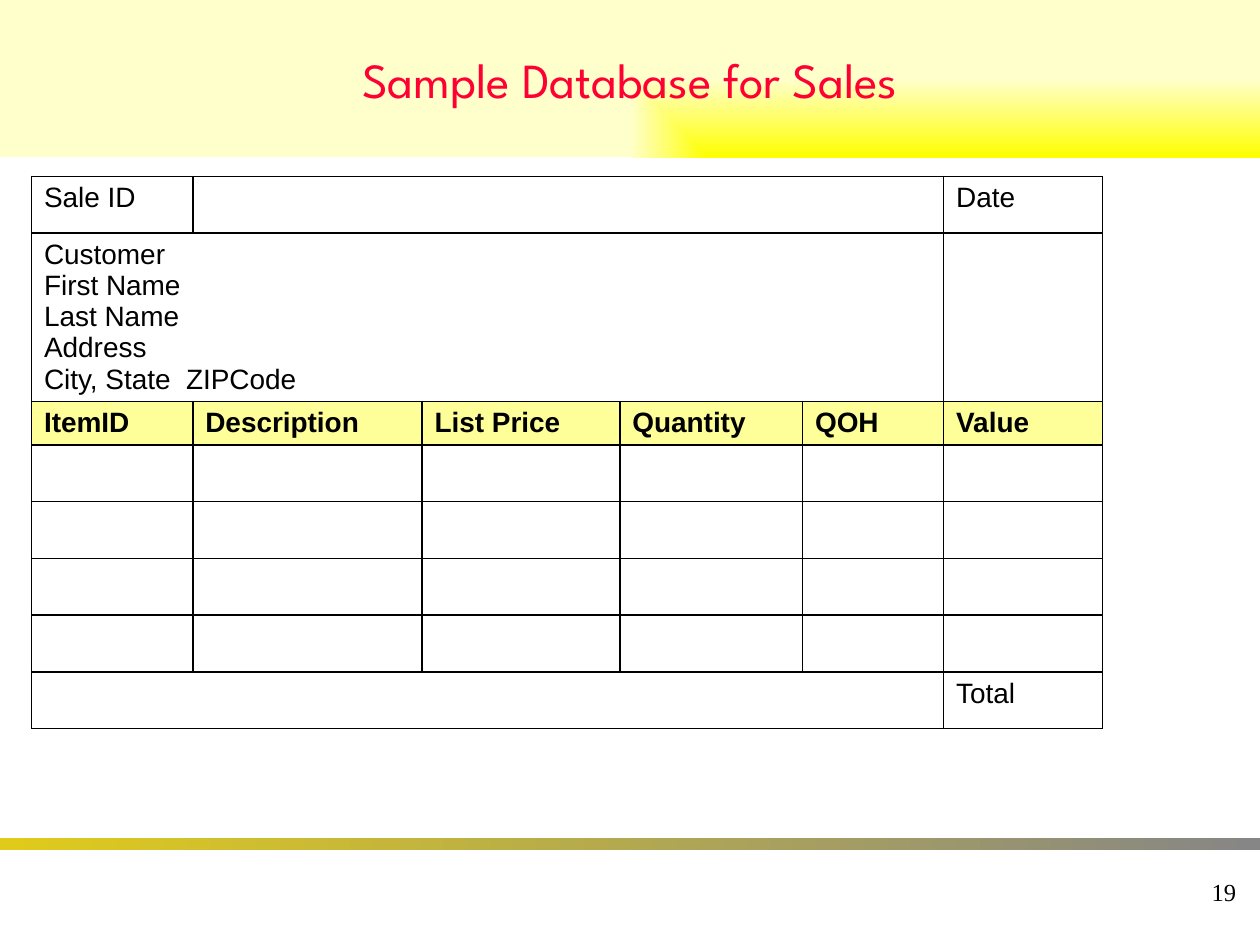
from lxml import etree
from pptx import Presentation
from pptx.dml.color import RGBColor
from pptx.enum.shapes import MSO_SHAPE
from pptx.enum.text import MSO_ANCHOR, PP_ALIGN
from pptx.oxml import parse_xml
from pptx.util import Inches, Pt

RECT = MSO_SHAPE.RECTANGLE
MIDDLE = MSO_ANCHOR.MIDDLE
CENTER, RIGHT = PP_ALIGN.CENTER, PP_ALIGN.RIGHT
NS = "http://schemas.openxmlformats.org/drawingml/2006/main"


def rgb(value):
    return RGBColor.from_string(value)


def set_font(p, name, size, color, bold=False):
    p.font.name = name
    p.font.size = Pt(size)
    p.font.bold = bold
    p.font.color.rgb = rgb(color)


prs = Presentation()
prs.slide_width, prs.slide_height = Inches(10), Inches(7.5)
s = prs.slides.add_slide(prs.slide_layouts[6])

bars = []
for top, height, colors in [(6.65, 0.1, ("E0CB1B", "868686")),
                            (0, 1.25, ("FFFF00", "FFFFCC"))]:
    sp = s.shapes.add_shape(RECT, 0, Inches(top), Inches(10), Inches(height))
    sp.shadow.inherit = False
    sp.line.fill.background()
    sp.fill.gradient()
    sp.fill.gradient_angle = 0
    for stop, color, position in zip(sp.fill.gradient_stops, colors, (0, 1)):
        stop.color.rgb = rgb(color)
        stop.position = position
    bars.append(sp)

title = bars[1]
lin = title.element.spPr.find(f".//{{{NS}}}lin")
lin.getparent().replace(lin, parse_xml(
    f'<a:path xmlns:a="{NS}" path="rect"><a:fillToRect l="100000" t="100000"/></a:path>'))
tf = title.text_frame
tf.word_wrap = True
tf.vertical_anchor = MIDDLE
p = tf.paragraphs[0]
p.text = "Sample Database for Sales"
p.alignment = CENTER
set_font(p, "League Spartan", 28, "FF0033")

col_widths = [1.28, 1.82, 1.57, 1.45, 1.12, 1.26]
row_heights = [0.45, 1.15, 0.29] + [0.45] * 5
rows = [
    ["Sale ID", "", "", "", "", "Date"],
    ["Customer\nFirst Name\nLast Name\nAddress\nCity, State  ZIPCode"],
    ["ItemID", "Description", "List Price", "Quantity", "QOH", "Value"],
    [], [], [], [],
    ["", "", "", "", "", "Total"],
]
header_row = 2
table = s.shapes.add_table(len(row_heights), len(col_widths), Inches(0.25), Inches(1.4),
                           Inches(sum(col_widths)), Inches(sum(row_heights))).table
table.first_row = table.horz_banding = False
for column, width in zip(table.columns, col_widths):
    column.width = Inches(width)
for row, height in zip(table.rows, row_heights):
    row.height = Inches(height)
for row, first in [(0, 1), (1, 0), (7, 0)]:
    table.cell(row, first).merge(table.cell(row, 4))

for i, texts in enumerate(rows):
    for j in range(len(col_widths)):
        cell = table.cell(i, j)
        tcPr = cell._tc.get_or_add_tcPr()
        for side in ("lnL", "lnR", "lnT", "lnB"):
            ln = etree.SubElement(tcPr, f"{{{NS}}}{side}", w=str(Pt(1)))
            fill = etree.SubElement(ln, f"{{{NS}}}solidFill")
            etree.SubElement(fill, f"{{{NS}}}srgbClr", val="000000")
        if i == header_row:
            cell.fill.solid()
            cell.fill.fore_color.rgb = rgb("FFFF99")
        else:
            cell.fill.background()
        if j < len(texts) and texts[j]:
            cell.text = texts[j]
            for p in cell.text_frame.paragraphs:
                set_font(p, "Arial", 16, "000000", i == header_row)
                pPr = p._p.get_or_add_pPr()
                pPr.set("marL", str(Inches(0.38)))
                pPr.set("indent", str(Inches(-0.38)))

number = s.shapes.add_textbox(Inches(7.83), Inches(6.83), Inches(2.08), Inches(0.5))
tf = number.text_frame
tf.word_wrap = False
tf.vertical_anchor = MIDDLE
p = tf.paragraphs[0]
p.text = "19"
p.alignment = RIGHT
set_font(p, "Times New Roman", 14, "000000")

prs.save("out.pptx")
